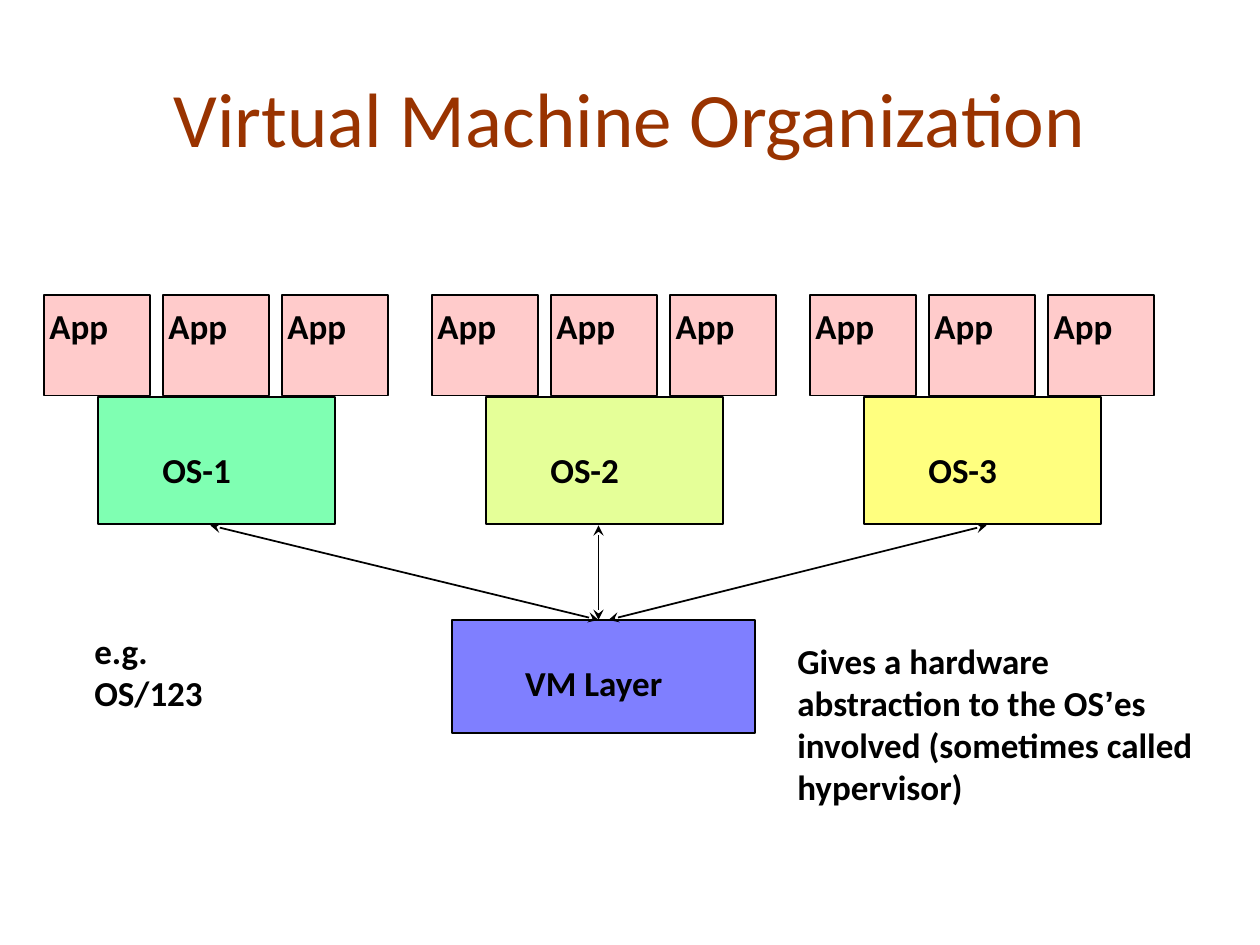
from lxml import etree
from pptx import Presentation
from pptx.dml.color import RGBColor
from pptx.enum.shapes import MSO_CONNECTOR, MSO_SHAPE
from pptx.enum.text import MSO_ANCHOR, PP_ALIGN
from pptx.oxml.ns import qn
from pptx.util import Inches, Pt

RECT = MSO_SHAPE.RECTANGLE
STRAIGHT = MSO_CONNECTOR.STRAIGHT
LEFT, CENTER = PP_ALIGN.LEFT, PP_ALIGN.CENTER
TOP, MIDDLE = MSO_ANCHOR.TOP, MSO_ANCHOR.MIDDLE

BLACK = RGBColor(0x00, 0x00, 0x00)
RUST = RGBColor(0x99, 0x33, 0x00)
PINK = RGBColor(0xFF, 0x99, 0x99)
GREEN = RGBColor(0x00, 0xFF, 0x66)
LIME = RGBColor(0xCC, 0xFF, 0x33)
YELLOW = RGBColor(0xFF, 0xFF, 0x00)
BLUE = RGBColor(0x00, 0x00, 0xFF)

TITLE_FONT = {"name": "Calibri", "size": Pt(44)}
LABEL_FONT = {"name": "Calibri", "size": Pt(20), "bold": True}

TITLE = "Virtual Machine Organization"
SYSTEMS = [("OS-1", GREEN, 0.35), ("OS-2", LIME, 3.43), ("OS-3", YELLOW, 6.43)]
APPS = ["App", "App", "App"]
VM_LABEL = "VM Layer"
EXAMPLE = [["e.g."], ["OS/123"]]
NOTE = [
    ["Gives a hardware"],
    ["abstraction to the OS", "’", "es"],
    ["involved (sometimes called"],
    ["hypervisor)"],
]
ARROWS = [(1.67, 4.75), (4.75, 4.75), (7.83, 4.83)]

APP_TOP, APP_W, APP_H, APP_STEP = 2.34, 0.84, 0.8, 0.945
OS_TOP, OS_W, OS_H, OS_INDENT = 3.15, 1.88, 1.01, 0.43
ARROW_TOP, VM_TOP = 4.17, 4.92


def add_box(shapes, at, color):
    sp = shapes.add_shape(RECT, *map(Inches, at))
    sp.shadow.inherit = False
    sp.fill.solid()
    sp.fill.fore_color.rgb = color
    clr = sp.fill._xPr.find(qn("a:solidFill"))[0]
    etree.SubElement(clr, qn("a:alpha")).set("val", "50000")
    sp.line.color.rgb = BLACK
    sp.line.width = Pt(1)


def add_text(shapes, at, lines, font=LABEL_FONT, color=BLACK, align=LEFT,
             anchor=TOP, wrap=False):
    tf = shapes.add_textbox(*map(Inches, at)).text_frame
    tf.word_wrap = wrap
    tf.vertical_anchor = anchor
    for i, line in enumerate(lines):
        p = tf.add_paragraph() if i else tf.paragraphs[0]
        p.alignment = align
        for text in line:
            r = p.add_run()
            r.text = text
            for key, value in font.items():
                setattr(r.font, key, value)
            if text == "’":
                r.font.name = "Arial"
            r.font.color.rgb = color


def add_system(shapes, name, color, left):
    group = shapes.add_group_shape().shapes
    os_left = left + OS_INDENT
    add_box(group, (os_left, OS_TOP, OS_W, OS_H), color)
    add_text(group, (os_left + 0.41, OS_TOP + 0.36, 0.8, 0.43), [[name]])
    for i, app in enumerate(APPS):
        x = left + i * APP_STEP
        add_box(group, (x, APP_TOP, APP_W, APP_H), PINK)
        add_text(group, (x - 0.08, APP_TOP + 0.03, 0.71, 0.43), [[app]],
                 align=CENTER)


def add_arrow(shapes, x1, x2):
    ends = (x1, ARROW_TOP, x2, VM_TOP)
    cn = shapes.add_connector(STRAIGHT, *map(Inches, ends))
    cn.line.color.rgb = BLACK
    cn.line.width = Pt(1)
    ln = cn.line._get_or_add_ln()
    for end in ("a:headEnd", "a:tailEnd"):
        etree.SubElement(ln, qn(end)).set("type", "stealth")
    etree.SubElement(cn._element.spPr, qn("a:effectLst"))


def main():
    prs = Presentation()
    prs.slide_width, prs.slide_height = Inches(10), Inches(7.5)
    shapes = prs.slides.add_slide(prs.slide_layouts[6]).shapes

    add_text(shapes, (0.5, 0.3, 9, 1.25), [[TITLE]], TITLE_FONT, RUST,
             CENTER, MIDDLE, True)
    add_box(shapes, (3.59, VM_TOP, 2.4, 0.9), BLUE)
    add_text(shapes, (4.07, 5.2, 1.44, 0.43), [[VM_LABEL]])
    add_text(shapes, (6.23, 5.03, 3.36, 1.43), NOTE)
    for system in SYSTEMS:
        add_system(shapes, *system)
    for arrow in ARROWS:
        add_arrow(shapes, *arrow)
    add_text(shapes, (0.65, 4.95, 1.54, 0.77), EXAMPLE)

    prs.save("out.pptx")


if __name__ == "__main__":
    main()
